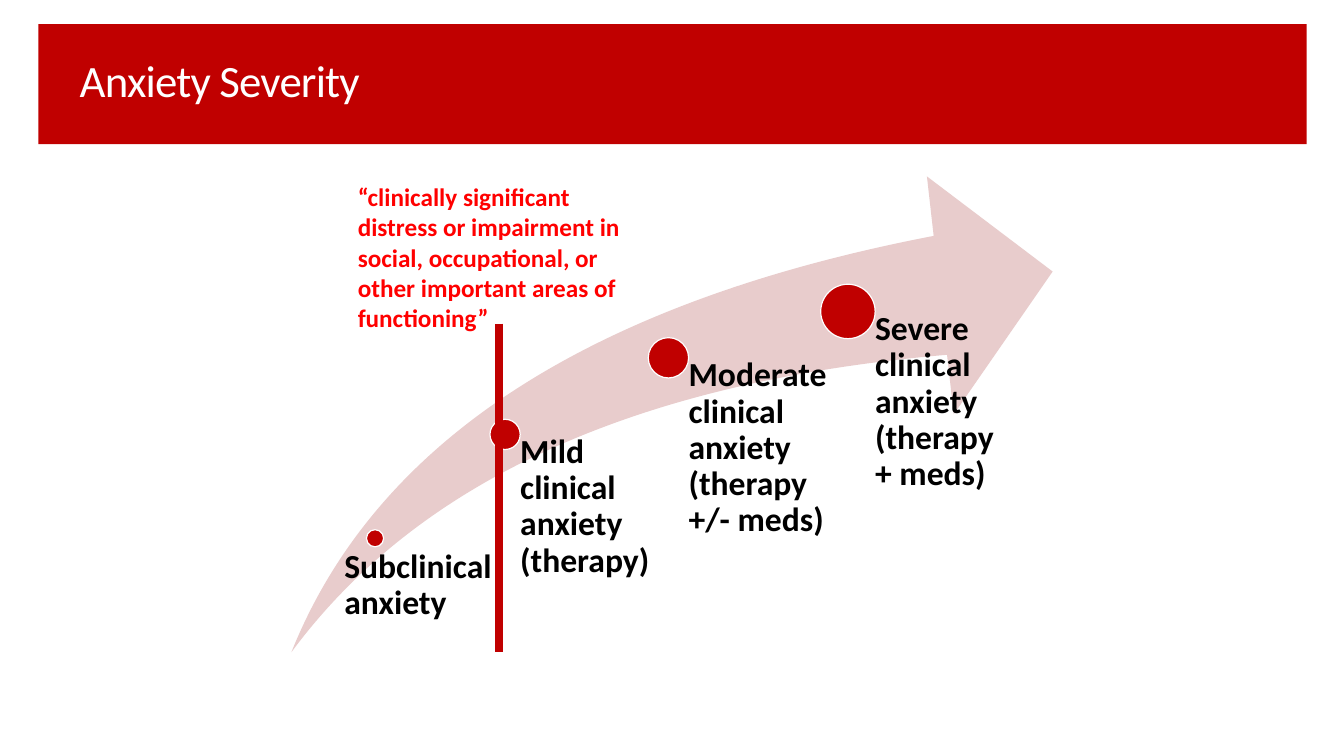
from pptx import Presentation
from pptx.dml.color import RGBColor
from pptx.enum.shapes import MSO_CONNECTOR, MSO_SHAPE
from pptx.enum.text import MSO_ANCHOR, PP_ALIGN
from pptx.oxml.ns import qn
from pptx.util import Inches, Pt
from lxml import etree

WHITE = RGBColor(0xFF, 0xFF, 0xFF)
BLACK = RGBColor(0x00, 0x00, 0x00)
DARK_RED = RGBColor(0xC0, 0x00, 0x00)
BRIGHT_RED = RGBColor(0xFF, 0x00, 0x00)
PALE_RED = RGBColor(0xE8, 0xCC, 0xCC)

ARROW_LEFT, ARROW_TOP, ARROW_WIDTH, ARROW_HEIGHT = 2.89, 1.75, 7.55, 4.72
ARROW_BOTTOM = ARROW_TOP + ARROW_HEIGHT
LABEL_WIDTH = 1.6

# Dot centre x, centre y, diameter, label text, label shift from the centre
STAGES = [
    (3.72, 5.34, 0.17, "Subclinical anxiety", (-0.39, 0.11)),
    (5.01, 4.31, 0.30, "Mild clinical anxiety (therapy)", (0, 0)),
    (6.63, 3.55, 0.40, "Moderate clinical anxiety (therapy +/- meds)", (0, 0)),
    (8.41, 3.09, 0.54, "Severe clinical anxiety (therapy + meds)", (0, 0)),
]


def write_text(frame, text, size, color, bold=False, line_spacing=1.0,
               tracking=None, anchor=MSO_ANCHOR.TOP):
    frame.word_wrap = True
    frame.vertical_anchor = anchor
    paragraph = frame.paragraphs[0]
    paragraph.alignment = PP_ALIGN.LEFT
    paragraph.line_spacing = line_spacing
    run = paragraph.add_run()
    run.text = text
    font = run.font
    font.name, font.size, font.bold = "Calibri", Pt(size), bold
    font.color.rgb = color
    if tracking is not None:
        run._r.get_or_add_rPr().set("spc", str(round(tracking * 100)))


class SlideBuilder:
    def __init__(self, slide):
        self.slide = slide
        self.shapes = slide.shapes

    def shape(self, kind, left, top, width, height, fill, outline=None):
        shape = self.shapes.add_shape(
            kind, Inches(left), Inches(top), Inches(width), Inches(height))
        shape.shadow.inherit = False
        shape.fill.solid()
        shape.fill.fore_color.rgb = fill
        if outline is None:
            shape.line.fill.background()
        else:
            shape.line.color.rgb = outline
            shape.line.width = Pt(0.85)
        return shape

    def title(self, text):
        banner = self.shape(MSO_SHAPE.RECTANGLE, 0.38, 0.24, 12.58, 1.19, DARK_RED)
        title = self.shapes.title
        title.left, title.top = Inches(0.69), Inches(0.33)
        title.width, title.height = Inches(11.54), Inches(0.99)
        write_text(title.text_frame, text, 32, WHITE, line_spacing=0.9,
                   tracking=-0.6, anchor=MSO_ANCHOR.MIDDLE)
        # The banner lies behind the title
        title._element.addprevious(banner._element)

    def text_box(self, left, top, width, height, text, insets=None, **style):
        box = self.shapes.add_textbox(
            Inches(left), Inches(top), Inches(width), Inches(height))
        frame = box.text_frame
        if insets is not None:
            (frame.margin_left, frame.margin_top,
             frame.margin_right, frame.margin_bottom) = map(Inches, insets)
        write_text(frame, text, **style)

    def stage(self, x, y, diameter, text, shift):
        radius = diameter / 2
        self.shape(MSO_SHAPE.OVAL, x - radius, y - radius, diameter, diameter,
                   DARK_RED, outline=WHITE)
        left, top = x + shift[0], y + shift[1]
        self.text_box(left, top, LABEL_WIDTH, ARROW_BOTTOM - top, text,
                      insets=(radius, 0, 0, 0), size=24, color=BLACK,
                      bold=True, line_spacing=0.9)

    def vertical_line(self, x, top, bottom, color, width):
        line = self.shapes.add_connector(
            MSO_CONNECTOR.STRAIGHT, Inches(x), Inches(top), Inches(x), Inches(bottom))
        line.line.color.rgb = color
        line.line.width = Pt(width)
        etree.SubElement(line._element.spPr, qn("a:effectLst"))


def main():
    presentation = Presentation()
    presentation.slide_width, presentation.slide_height = Inches(13.33), Inches(7.5)
    builder = SlideBuilder(presentation.slides.add_slide(presentation.slide_layouts[5]))

    # Title banner
    builder.title("Anxiety Severity")

    # Rising arrow with the four stages
    arrow = builder.shape(MSO_SHAPE.SWOOSH_ARROW, ARROW_LEFT, ARROW_TOP,
                          ARROW_WIDTH, ARROW_HEIGHT, PALE_RED)
    arrow.adjustments[0] = arrow.adjustments[1] = 0.25
    for stage in STAGES:
        builder.stage(*stage)

    # Clinical threshold and its definition
    builder.vertical_line(4.95, 3.21, ARROW_BOTTOM, DARK_RED, 6)
    builder.text_box(
        3.45, ARROW_TOP, 3.01, 1.62,
        "“clinically significant distress or impairment in social, occupational, "
        "or other important areas of functioning”",
        size=18, color=BRIGHT_RED, bold=True)

    presentation.save("out.pptx")


if __name__ == "__main__":
    main()
